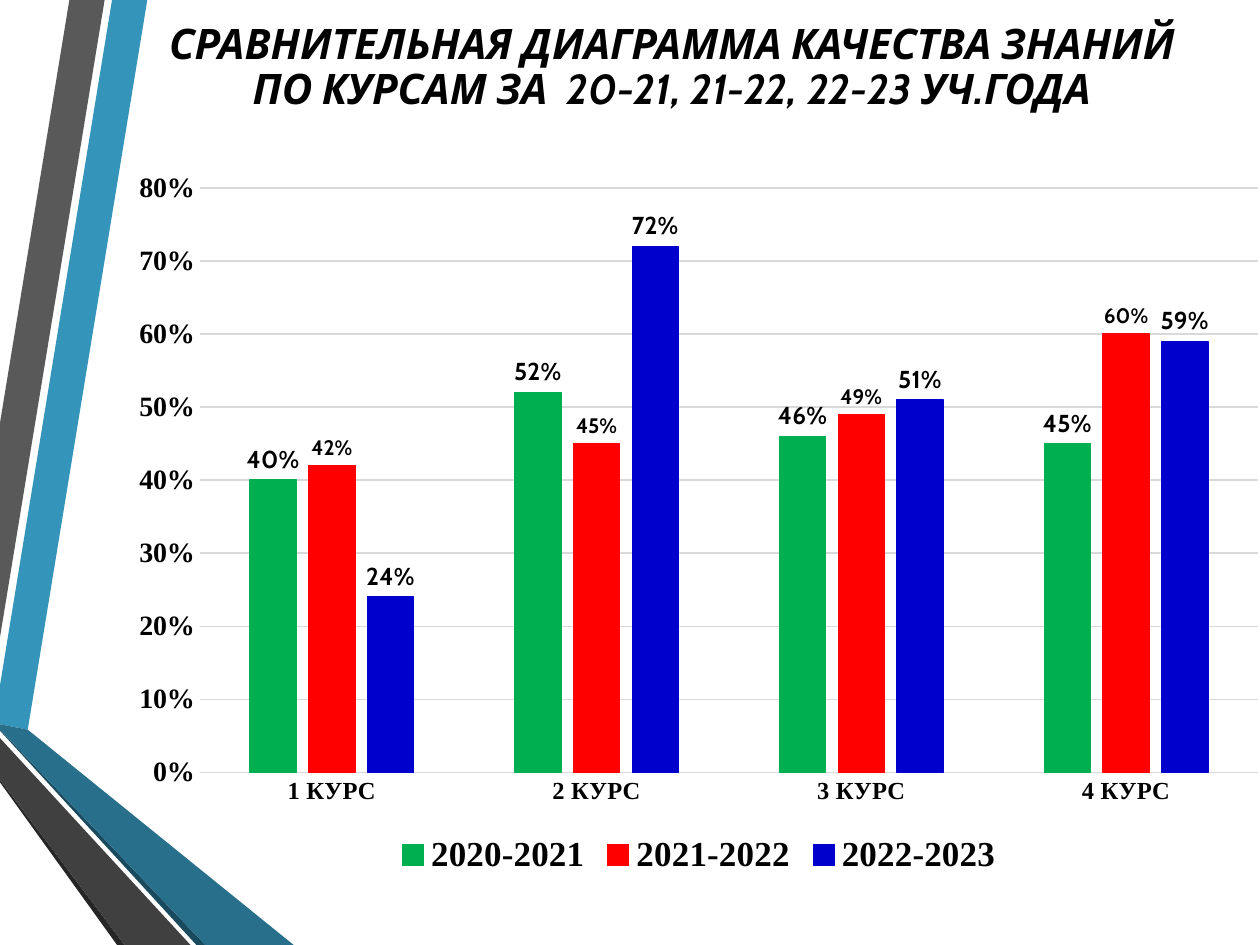
from pptx import Presentation
from pptx.chart.data import CategoryChartData
from pptx.dml.color import RGBColor
from pptx.enum.chart import XL_CHART_TYPE, XL_LABEL_POSITION, XL_LEGEND_POSITION, XL_TICK_MARK
from pptx.enum.text import MSO_ANCHOR, PP_ALIGN
from pptx.util import Cm, Pt

WIDTH, HEIGHT = 25.4, 19.05
SANS, SERIF = "Cabin", "Times New Roman"
COLORS = {
    "text": "000000", "grid": "D9D9D9",
    "blue": "3494BA", "grey": "595959",
    "dark grey edge": "262626", "dark blue edge": "1A4A5D",
    "dark blue": "276F8B", "dark grey": "404040",
    "2020-2021": "00B050", "2021-2022": "FF0000", "2022-2023": "0000CC",
}
TITLE = "СРАВНИТЕЛЬНАЯ ДИАГРАММА КАЧЕСТВА ЗНАНИЙ ПО КУРСАМ ЗА  20-21, 21-22, 22-23 УЧ.ГОДА"

# Ribbon corners in centimetres, from back to front
RIBBONS = [
    ("blue", [(0, 13.82), (0, 14.6), (0.56, 14.71), (2.97, 0), (2.26, 0)]),
    ("grey", [(2.11, 0), (1.4, 0), (0, 8.53), (0, 12.85)]),
    ("dark grey edge", [(0, 15.72), (0, 15.77), (2.36, HEIGHT), (2.51, HEIGHT)]),
    ("dark blue edge", [(0, 14.71), (0, 14.73), (3.96, HEIGHT), (4.14, HEIGHT)]),
    ("dark blue", [(0, 14.71), (4.14, HEIGHT), (5.92, HEIGHT), (0.56, 14.71), (0, 14.6)]),
    ("dark grey", [(0, 15.72), (2.51, HEIGHT), (3.84, HEIGHT), (0, 14.88)]),
]

COURSES = [f"{number} КУРС" for number in range(1, 5)]
# Year: (share per course, label size)
QUALITY = {
    "2020-2021": ((0.40, 0.52, 0.46, 0.45), 14),
    "2021-2022": ((0.42, 0.45, 0.49, 0.60), 12),
    "2022-2023": ((0.24, 0.72, 0.51, 0.59), 14),
}


def color(name):
    return RGBColor.from_string(COLORS[name])


def style_font(font, size, family):
    font.size = Pt(size)
    font.name = family
    font.bold = True
    font.color.rgb = color("text")


def style_line(line, name):
    line.color.rgb = color(name)
    line.width = Pt(0.75)


def add_ribbon(slide, name, corners):
    start, *others = [(Cm(x), Cm(y)) for x, y in corners]
    outline = slide.shapes.build_freeform(*start)
    outline.add_line_segments(others, close=True)
    ribbon = outline.convert_to_shape()
    ribbon.shadow.inherit = False
    ribbon.fill.solid()
    ribbon.fill.fore_color.rgb = color(name)
    ribbon.line.fill.background()


def add_title(slide):
    title = slide.shapes.add_textbox(Cm(2.84), Cm(0.64), Cm(21.41), Cm(1.47))
    frame = title.text_frame
    frame.word_wrap = True
    frame.vertical_anchor = MSO_ANCHOR.MIDDLE
    frame.text = TITLE
    heading = frame.paragraphs[0]
    heading.alignment = PP_ALIGN.CENTER
    heading.line_spacing = 0.9
    style_font(heading.runs[0].font, 24, SANS)
    heading.runs[0].font.italic = True


def style_axes(chart):
    for axis, size in ((chart.category_axis, 14), (chart.value_axis, 16)):
        axis.major_tick_mark = axis.minor_tick_mark = XL_TICK_MARK.NONE
        style_font(axis.tick_labels.font, size, SERIF)
    style_line(chart.category_axis.format.line, "grid")

    shares = chart.value_axis
    shares.minimum_scale, shares.maximum_scale, shares.major_unit = 0, 0.8, 0.1
    shares.format.line.fill.background()
    shares.tick_labels.number_format = "0%"
    shares.tick_labels.number_format_is_linked = False
    shares.has_major_gridlines = True
    style_line(shares.major_gridlines.format.line, "grid")


def style_year(year, label_size):
    year.format.fill.solid()
    year.format.fill.fore_color.rgb = color(year.name)
    style_line(year.format.line, year.name)
    labels = year.data_labels
    labels.show_value = True
    labels.number_format = "0%"
    labels.number_format_is_linked = False
    labels.position = XL_LABEL_POSITION.OUTSIDE_END
    style_font(labels.font, label_size, SANS)


def add_quality_chart(slide):
    data = CategoryChartData(number_format="0%")
    data.categories = COURSES
    for year, (shares, _) in QUALITY.items():
        data.add_series(year, shares)
    chart = slide.shapes.add_chart(
        XL_CHART_TYPE.COLUMN_CLUSTERED, Cm(2.34), Cm(3.18), Cm(23.5), Cm(14.6), data
    ).chart
    chart.has_title = False
    chart.font.size = Pt(10)
    chart.font.name = SANS
    chart.font.color.rgb = color("text")
    style_axes(chart)

    # Columns, one colour per year
    columns = chart.plots[0]
    columns.vary_by_categories = False
    columns.gap_width = 219
    columns.overlap = -27
    for year in columns.series:
        style_year(year, QUALITY[year.name][1])

    # Legend
    chart.has_legend = True
    chart.legend.position = XL_LEGEND_POSITION.BOTTOM
    chart.legend.include_in_layout = False
    style_font(chart.legend.font, 20, SERIF)


def main():
    presentation = Presentation()
    presentation.slide_width, presentation.slide_height = Cm(WIDTH), Cm(HEIGHT)
    slide = presentation.slides.add_slide(presentation.slide_layouts[6])
    for name, corners in RIBBONS:
        add_ribbon(slide, name, corners)
    add_title(slide)
    add_quality_chart(slide)
    presentation.save("out.pptx")


if __name__ == "__main__":
    main()
